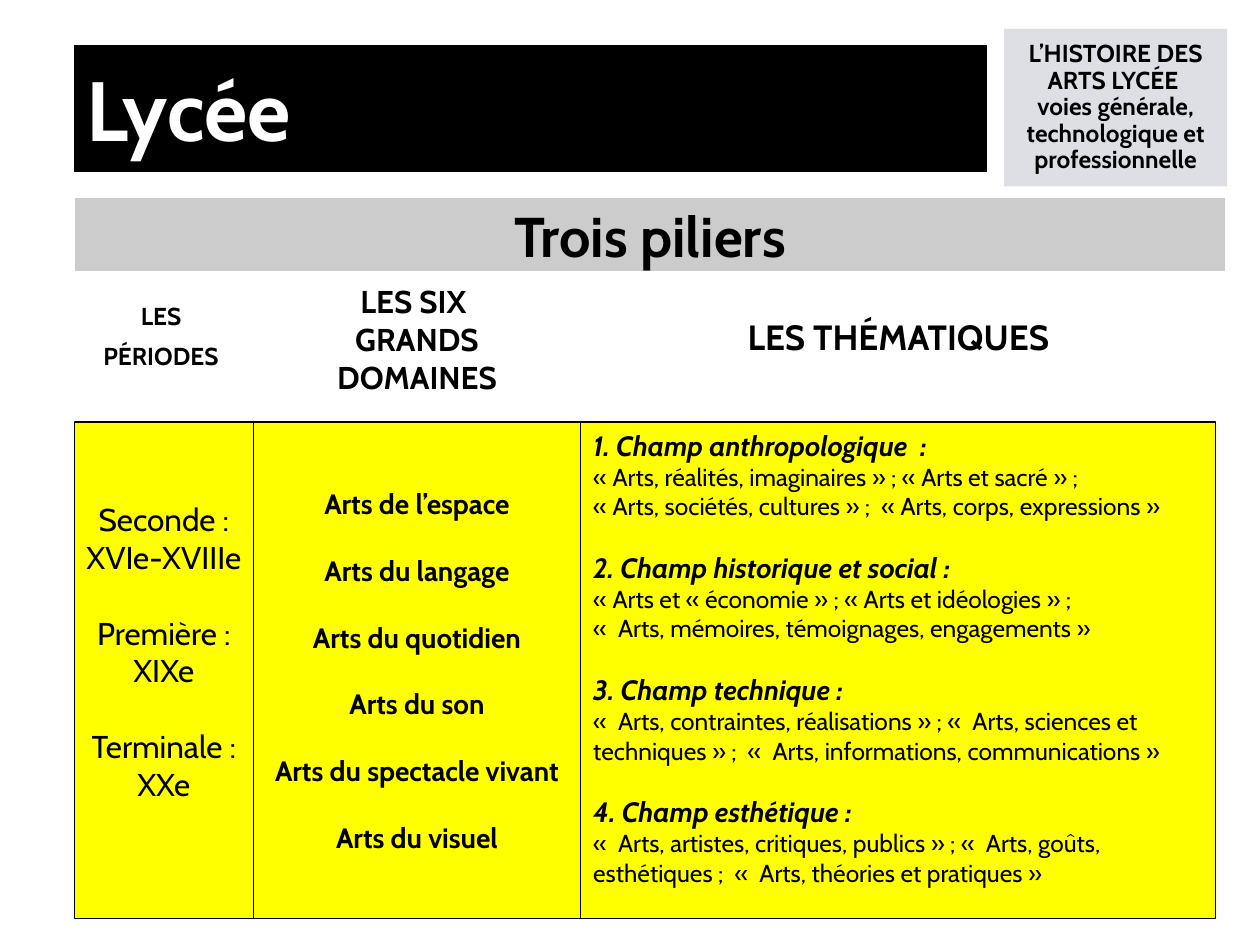
import pptx
import pptx.util
import pptx.dml.color
import pptx.enum.shapes
import pptx.enum.text

Inches = pptx.util.Inches
Pt = pptx.util.Pt
RGBColor = pptx.dml.color.RGBColor
ALIGN = pptx.enum.text.PP_ALIGN
ANCHOR = pptx.enum.text.MSO_ANCHOR

FONT = "Cabin"
BLACK = RGBColor(0x00, 0x00, 0x00)
WHITE = RGBColor(0xFF, 0xFF, 0xFF)
YELLOW = RGBColor(0xFF, 0xFF, 0x00)
GRAY = RGBColor(0xCC, 0xCC, 0xCC)
PALE_GRAY = RGBColor(0xDD, 0xDF, 0xE5)

LEFT = 0.59
HEADER_TOP, HEADER_HEIGHT = 2.16, 1.36
COLUMN_TOP, COLUMN_HEIGHT = 3.35, 3.94
COLUMN_WIDTHS = (1.42, 2.6, 5.04)

PERIODS = [("Seconde :", "XVIe-XVIIIe"), ("Première :", "XIXe"), ("Terminale :", "XXe")]
DOMAINS = ["Arts de l’espace", "Arts du langage", "Arts du quotidien",
           "Arts du son", "Arts du spectacle vivant", "Arts du visuel"]
THEMES = [
    ("1. Champ anthropologique  :",
     ["« Arts, réalités, imaginaires » ; « Arts et sacré » ;",
      "« Arts, sociétés, cultures » ;  « Arts, corps, expressions »"]),
    ("2. Champ historique et social :",
     ["« Arts et « économie » ; « Arts et idéologies » ;",
      "«  Arts, mémoires, témoignages, engagements »"]),
    ("3. Champ technique :",
     ["«  Arts, contraintes, réalisations » ; «  Arts, sciences et techniques » ;"
      "  «  Arts, informations, communications »"]),
    ("4. Champ esthétique :",
     ["«  Arts, artistes, critiques, publics » ; «  Arts, goûts, esthétiques ;"
      "  «  Arts, théories et pratiques »"]),
]


def add_panel(page, box, fill, line=None, anchor=ANCHOR.MIDDLE, wrap=False, bottom=0.05):
    """Filled rectangle; returns its text frame."""
    panel = page.shapes.add_shape(
        pptx.enum.shapes.MSO_SHAPE.RECTANGLE, *[Inches(length) for length in box])
    panel.shadow.inherit = False
    panel.fill.solid()
    panel.fill.fore_color.rgb = fill
    if line is None:
        panel.line.fill.background()
    else:
        panel.line.color.rgb = line
        panel.line.width = Pt(0.75)
    frame = panel.text_frame
    frame.word_wrap = wrap
    frame.vertical_anchor = anchor
    frame.margin_left = frame.margin_right = Inches(0.1)
    frame.margin_top, frame.margin_bottom = Inches(0.05), Inches(bottom)
    return frame


def add_span(para, text, size, bold=False, italic=False, color=BLACK):
    span = para.add_run()
    span.text = text
    span.font.name = FONT
    span.font.size = Pt(size)
    span.font.bold = bold
    span.font.italic = italic
    span.font.color.rgb = color


def add_para(frame, text, size, align=ALIGN.CENTER, before=0, **style):
    """Next paragraph of the frame; the gap is left out above the first one."""
    first = not frame.paragraphs[0].runs
    para = frame.paragraphs[0] if first else frame.add_paragraph()
    para.alignment = align
    para.space_before = Pt(0 if first else before)
    add_span(para, text, size, **style)
    return para


def add_title(page, box):
    frame = add_panel(page, box, BLACK, BLACK)
    add_para(frame, "Lycée", 48, ALIGN.LEFT, bold=True, color=WHITE)


def add_course_label(page, box):
    frame = add_panel(page, box, PALE_GRAY, wrap=True)
    para = add_para(frame, "L’HISTOIRE DES ARTS LYCÉE ", 14, bold=True)
    para.line_spacing = 0.9
    para.add_line_break()
    add_span(para, "voies générale, technologique et professionnelle", 14, bold=True)


def add_banner(page, box):
    frame = add_panel(page, box, GRAY, WHITE)
    add_para(frame, "Trois piliers", 32, bold=True)


def add_header(page, box, lines, size, bottom, gap=0):
    frame = add_panel(page, box, WHITE, bottom=bottom)
    for line in lines:
        add_para(frame, line, size, before=gap, bold=True)


def add_periods(page, box):
    frame = add_panel(page, box, YELLOW, BLACK, bottom=0.35)
    for level, centuries in PERIODS:
        add_para(frame, level, 18, before=21.5)
        add_para(frame, centuries, 18)


def add_domains(page, box):
    frame = add_panel(page, box, YELLOW, BLACK)
    for domain in DOMAINS:
        add_para(frame, domain, 16, before=19, bold=True)


def add_themes(page, box):
    frame = add_panel(page, box, YELLOW, BLACK, anchor=ANCHOR.TOP, wrap=True)
    for field, lines in THEMES:
        add_para(frame, field, 16, ALIGN.LEFT, before=17, bold=True, italic=True)
        for line in lines:
            add_para(frame, line, 14, ALIGN.LEFT)


def main():
    deck = pptx.Presentation()
    deck.slide_width, deck.slide_height = Inches(10), Inches(7.5)
    page = deck.slides.add_slide(deck.slide_layouts[6])

    # Top of the page
    add_course_label(page, (7.97, 0.23, 1.77, 1.25))
    add_banner(page, (LEFT, 1.57, 9.14, 0.59))
    add_title(page, (LEFT, 0.36, 7.24, 1))

    # Column headers: lines, size, bottom inset, gap between lines
    headers = [
        (["LES ", "PÉRIODES "], 14, 0.4, 5.8),
        (["LES SIX ", "GRANDS", "DOMAINES"], 18, 0.35, 0),
        (["LES THÉMATIQUES"], 20, 0.38, 0),
    ]
    lefts = [LEFT + sum(COLUMN_WIDTHS[:index]) for index in range(len(COLUMN_WIDTHS))]
    for left, width, header in zip(lefts, COLUMN_WIDTHS, headers):
        add_header(page, (left, HEADER_TOP, width, HEADER_HEIGHT), *header)

    # Yellow columns
    columns = (add_periods, add_domains, add_themes)
    for left, width, add_column in zip(lefts, COLUMN_WIDTHS, columns):
        add_column(page, (left, COLUMN_TOP, width, COLUMN_HEIGHT))

    deck.save("out.pptx")


if __name__ == "__main__":
    main()
